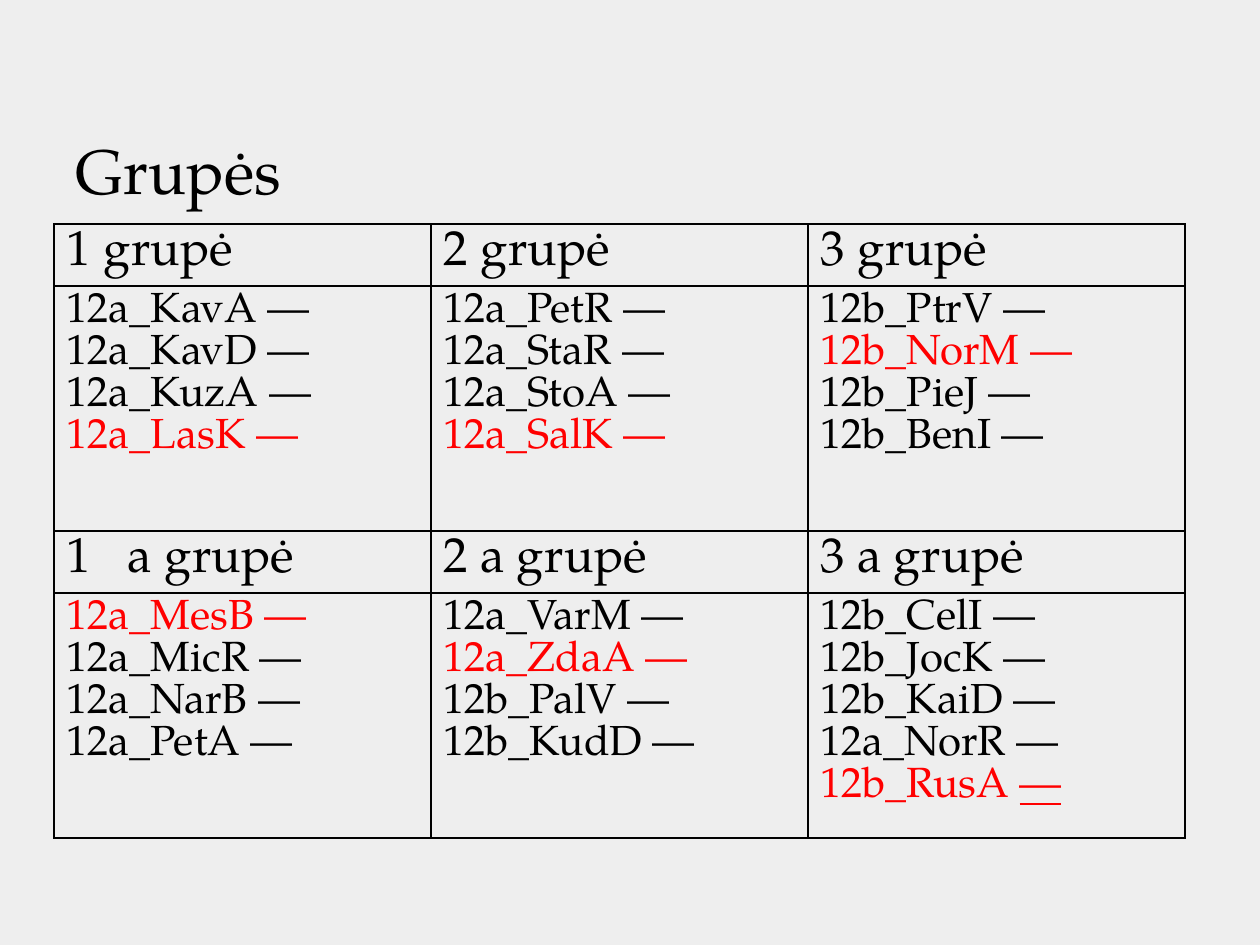
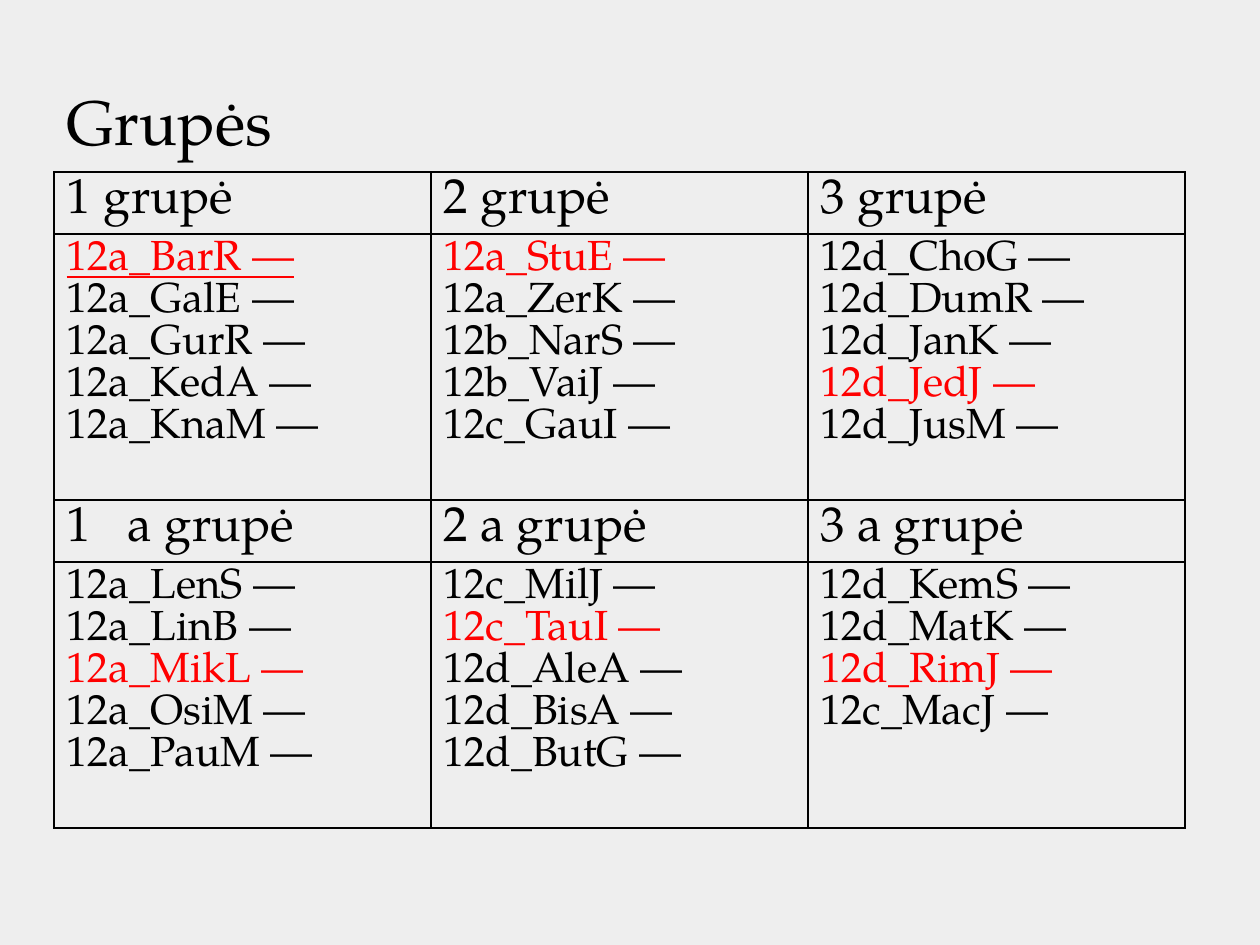
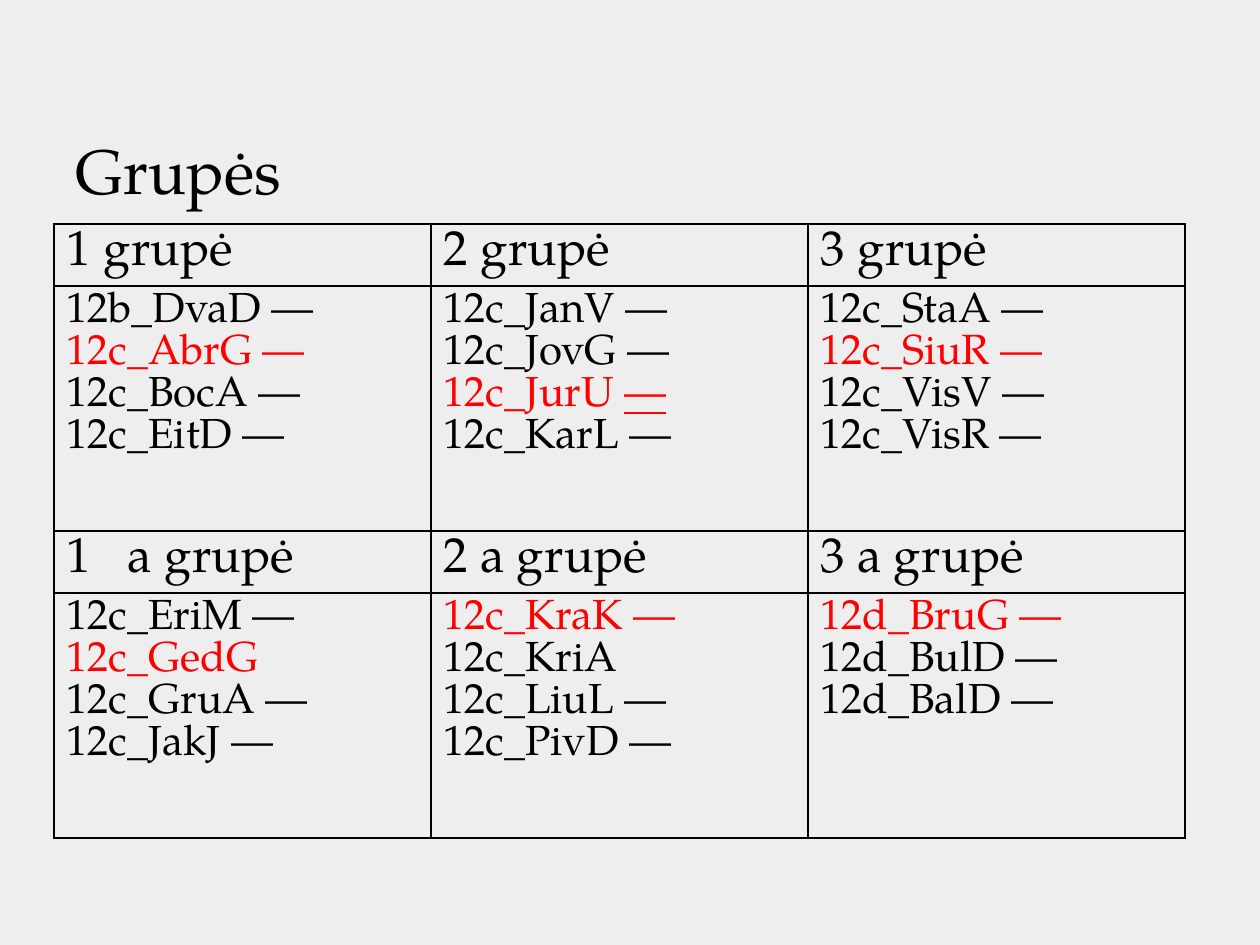
from lxml import etree
from pptx import Presentation, util as u
from pptx.dml.color import RGBColor
from pptx.enum import text
from pptx.oxml import ns

COLOURS = {"page": "EEEEEE", "ink": "000000", "marked": "FF0000"}
FONT = "TeX Gyre Pagella"
EMU_PER_PX = 914400 / 126
HEADING_SIZE, NAME_SIZE, TITLE_SIZE = 28, 24, 36
HEADINGS = [
    ["1 grupė", "2 grupė", "3 grupė"],
    ["1\ta grupė", "2 a grupė", "3 a grupė"],
]
# "*" marks a name in red and "|" starts its underlined part.
PAGES = [
    {
        "title": (63, 49), "table_top": 224, "names_height": 245,
        "groups": [
            [
                ["12a_KavA —", "12a_KavD —", "12a_KuzA —", "*12a_LasK —"],
                ["12a_PetR —", "12a_StaR —", "12a_StoA —", "*12a_SalK —"],
                ["12b_PtrV —", "*12b_NorM —", "12b_PieJ —", "12b_BenI —"],
            ],
            [
                ["*12a_MesB —", "12a_MicR —", "12a_NarB —", "12a_PetA —"],
                ["12a_VarM —", "*12a_ZdaA —", "12b_PalV —", "12b_KudD —"],
                ["12b_CelI —", "12b_JocK —", "12b_KaiD —", "12a_NorR —", "*12b_RusA |—"],
            ],
        ],
    },
    {
        "title": (54, 0), "table_top": 172, "names_height": 266,
        "groups": [
            [
                ["*|12a_BarR —", "12a_GalE —", "12a_GurR —", "12a_KedA —", "12a_KnaM —"],
                ["*12a_StuE —", "12a_ZerK —", "12b_NarS —", "12b_VaiJ —", "12c_GauI —"],
                ["12d_ChoG —", "12d_DumR —", "12d_JanK —", "*12d_JedJ —", "12d_JusM —"],
            ],
            [
                ["12a_LenS —", "12a_LinB —", "*12a_MikL —", "12a_OsiM —", "12a_PauM —"],
                ["12c_MilJ —", "*12c_TauI —", "12d_AleA —", "12d_BisA —", "12d_ButG —"],
                ["12d_KemS —", "12d_MatK —", "*12d_RimJ —", "12c_MacJ —"],
            ],
        ],
    },
    {
        "title": (63, 49), "table_top": 224, "names_height": 245,
        "groups": [
            [
                ["12b_DvaD —", "*12c_AbrG —", "12c_BocA —", "12c_EitD —"],
                ["12c_JanV —", "12c_JovG —", "*12c_JurU |—", "12c_KarL —"],
                ["12c_StaA —", "*12c_SiuR —", "12c_VisV —", "12c_VisR —"],
            ],
            [
                ["12c_EriM —", "*12c_GedG", "12c_GruA —", "12c_JakJ —"],
                ["*12c_KraK —", "12c_KriA", "12c_LiuL —", "12c_PivD —"],
                ["*12d_BruG —", "12d_BulD —", "12d_BalD —"],
            ],
        ],
    },
]


def px(length):
    return u.Emu(round(length * EMU_PER_PX))


def write_line(para, entry, size):
    para.line_spacing = u.Pt(size)
    if "\t" in entry:
        stops = etree.SubElement(para._p.get_or_add_pPr(), ns.qn("a:tabLst"))
        etree.SubElement(stops, ns.qn("a:tab"), pos=str(px(61)), algn="l")
    colour = COLOURS["marked" if entry.startswith("*") else "ink"]
    for index, part in enumerate(entry.lstrip("*").split("|")):
        if part:
            span = para.add_run()
            span.text = part
            span.font.name = FONT
            span.font.size = u.Pt(size)
            span.font.color.rgb = RGBColor.from_string(colour)
            if index:
                span.font.underline = True


deck = Presentation()
deck.slide_width, deck.slide_height = px(1260), px(945)

for content in PAGES:
    page = deck.slides.add_slide(deck.slide_layouts[6])
    page.background.fill.solid()
    page.background.fill.fore_color.rgb = RGBColor.from_string(COLOURS["page"])

    left, top = content["title"]
    title = page.shapes.add_textbox(px(left), px(top), px(1134), px(158)).text_frame
    title.word_wrap = True
    title.vertical_anchor = text.MSO_ANCHOR.BOTTOM
    title.margin_bottom = 0
    write_line(title.paragraphs[0], "Grupės", TITLE_SIZE)

    heights = [62, content["names_height"]] * 2
    table = page.shapes.add_table(
        4, 3, px(54), px(content["table_top"]), px(1131), px(sum(heights))
    ).table
    table.first_row = table.horz_banding = False
    for column in table.columns:
        column.width = px(377)

    rows = []
    for headings, names in zip(HEADINGS, content["groups"]):
        rows.append((HEADING_SIZE, [[heading] for heading in headings]))
        rows.append((NAME_SIZE, names))

    for row_index, (size, row) in enumerate(rows):
        table.rows[row_index].height = px(heights[row_index])
        for column_index, entries in enumerate(row):
            cell = table.cell(row_index, column_index)
            for side in ("lnL", "lnR", "lnT", "lnB"):
                border = etree.SubElement(
                    cell._tc.get_or_add_tcPr(), ns.qn(f"a:{side}"), w=str(u.Pt(1))
                )
                paint = etree.SubElement(border, ns.qn("a:solidFill"))
                etree.SubElement(paint, ns.qn("a:srgbClr"), val=COLOURS["ink"])
            cell.fill.background()
            frame = cell.text_frame
            for index, entry in enumerate(entries):
                para = frame.add_paragraph() if index else frame.paragraphs[0]
                write_line(para, entry, size)

deck.save("out.pptx")
